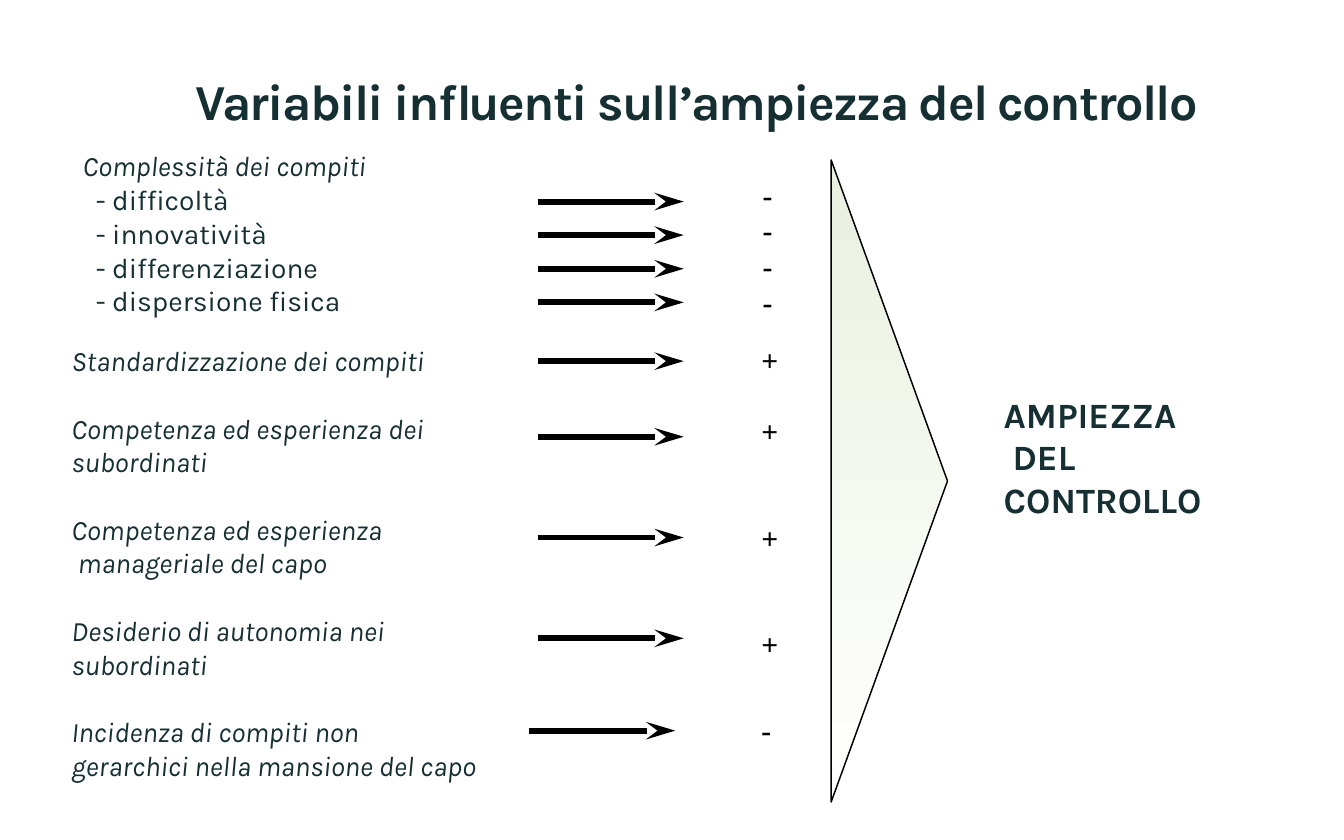
from dataclasses import dataclass

from lxml.etree import SubElement
from pptx import Presentation
from pptx.dml.color import RGBColor
from pptx.enum.shapes import MSO_CONNECTOR, MSO_SHAPE
from pptx.enum.text import MSO_ANCHOR, MSO_AUTO_SIZE, PP_ALIGN
from pptx.oxml.ns import qn
from pptx.util import Cm, Pt

INK = "162F33"
BLACK = "000000"


@dataclass(frozen=True)
class Line:
    text: str
    before: float = 0  # points
    indent: float = 0  # centimetres
    italic: bool = False


@dataclass(frozen=True)
class Style:
    font: str
    size: float
    color: str
    bold: bool = False
    align: PP_ALIGN = PP_ALIGN.LEFT


@dataclass(frozen=True)
class Area:
    left: float
    top: float
    width: float
    height: float


@dataclass(frozen=True)
class Arrow:
    left: float
    y: float


def rgb(color: str) -> RGBColor:
    return RGBColor.from_string(color)


def place(shape, area: Area) -> None:
    shape.left, shape.top = Cm(area.left), Cm(area.top)
    shape.width, shape.height = Cm(area.width), Cm(area.height)


def write(box, lines: list[Line], style: Style, wrap: bool = True) -> None:
    frame = box.text_frame
    frame.word_wrap = wrap
    frame.auto_size = MSO_AUTO_SIZE.SHAPE_TO_FIT_TEXT
    frame.vertical_anchor = MSO_ANCHOR.TOP
    frame.margin_left = frame.margin_right = Cm(0.3)
    frame.margin_top = frame.margin_bottom = Cm(0.15)
    frame.text = "\n".join(line.text for line in lines)
    for para, line in zip(frame.paragraphs, lines):
        para.alignment = style.align
        para.space_before, para.space_after = Pt(line.before), Pt(0)
        properties = para._p.get_or_add_pPr()
        properties.set("marL", str(Cm(line.indent)))
        properties.set("indent", "0")
        SubElement(properties, qn("a:buNone"))
        format_span(para.runs[0], style, line.italic)


def format_span(span, style: Style, italic: bool = False) -> None:
    span.font.name = style.font
    span.font.size = Pt(style.size)
    span.font.bold = style.bold
    span.font.italic = italic
    span.font.color.rgb = rgb(style.color)


def add_text(page, area: Area, lines: list[Line], style: Style, wrap: bool = True) -> None:
    box = page.shapes.add_textbox(0, 0, 0, 0)
    write(box, lines, style, wrap)
    place(box, area)


def add_arrow(page, arrow: Arrow) -> None:
    y = Cm(arrow.y)
    connector = page.shapes.add_connector(
        MSO_CONNECTOR.STRAIGHT, Cm(arrow.left), y, Cm(arrow.left + ARROW_LENGTH), y)
    connector.line.color.rgb = rgb(BLACK)
    connector.line.width = Pt(4)
    SubElement(connector.line._get_or_add_ln(), qn("a:tailEnd"), type="stealth", len="lg")
    SubElement(connector._element.spPr, qn("a:effectLst"))


def add_funnel(page, area: Area) -> None:
    funnel = page.shapes.add_shape(MSO_SHAPE.ISOSCELES_TRIANGLE, 0, 0, 0, 0)
    place(funnel, area)
    funnel.rotation = 90
    funnel.shadow.inherit = False
    funnel.fill.gradient()
    funnel.fill.gradient_angle = 270
    for stop, color in zip(funnel.fill.gradient_stops, ("EAF0E0", "FFFFFF")):
        stop.color.rgb = rgb(color)
    # The shading stays vertical while the triangle is turned
    funnel._element.spPr.find(qn("a:gradFill")).set("rotWithShape", "0")
    funnel.line.color.rgb = rgb(BLACK)
    funnel.line.width = Pt(1)


TITLE = Style("Karla", 34, INK, bold=True)
LIST = Style("Karla", 19, INK)
RESULT = Style("Karla", 24, INK, bold=True)
SIGN = Style("Times New Roman", 20, BLACK, bold=True)
CENTERED_SIGN = Style("Times New Roman", 20, BLACK, bold=True, align=PP_ALIGN.CENTER)

GROUP_GAP = 22.7
TASK_FEATURES = ["difficoltà", "innovatività", "differenziazione", "dispersione fisica"]
COMPLEXITY = [Line("Complessità dei compiti", italic=True)] + [
    Line(f"- {feature}", indent=0.31) for feature in TASK_FEATURES]
FACTORS = [
    Line("Standardizzazione dei compiti", italic=True),
    Line("Competenza ed esperienza dei", GROUP_GAP, italic=True),
    Line("subordinati", italic=True),
    Line("Competenza ed esperienza", GROUP_GAP, italic=True),
    Line("manageriale del capo", indent=0.15, italic=True),
    Line("Desiderio di autonomia nei", GROUP_GAP, italic=True),
    Line("subordinati", italic=True),
    Line("Incidenza di compiti non", GROUP_GAP, italic=True),
    Line("gerarchici nella mansione del capo", italic=True),
]
FACTOR_SIGNS = [Line("+"), Line("+", 23.6), Line("+", 48), Line("+", 48), Line("-", 34)]
OUTCOME = [Line("AMPIEZZA"), Line("DEL", indent=0.21), Line("CONTROLLO")]

ARROW_LENGTH = 3.48
ARROWS = [Arrow(12.8, 4.8 + 0.8 * row) for row in range(len(TASK_FEATURES))]
ARROWS += [Arrow(12.8, y) for y in (8.6, 10.4, 12.8, 15.2)] + [Arrow(12.6, 17.4)]


def main() -> None:
    deck = Presentation()
    deck.slide_width, deck.slide_height = Pt(907.12), Pt(567)
    page = deck.slides.add_slide(deck.slide_layouts[3])
    title, complexity, factors = page.placeholders

    # Title
    place(title, Area(1.19, 0.99, 30.81, 3.02))
    title.text_frame.text = "Variabili influenti sull’ampiezza del controllo"
    title.text_frame.vertical_anchor = MSO_ANCHOR.MIDDLE
    title.text_frame.auto_size = MSO_AUTO_SIZE.NONE
    heading = title.text_frame.paragraphs[0]
    heading.alignment = PP_ALIGN.CENTER
    heading.line_spacing = 0.85
    format_span(heading.runs[0], TITLE)
    heading.runs[0].font._element.set("spc", "-113")

    # Triangle leading to the outcome
    add_funnel(page, Area(13.53, 10.07, 15.29, 2.77))
    add_text(page, Area(23.6, 9.2, 6.12, 3.35), OUTCOME, RESULT, wrap=False)

    # Variables
    write(complexity, COMPLEXITY, LIST, wrap=False)
    place(complexity, Area(1.67, 3.39, 7.6, 4.32))
    write(factors, FACTORS, LIST)
    place(factors, Area(1.4, 8.03, 12.22, 10.74))

    # Arrows and direction of each effect
    for arrow in ARROWS:
        add_arrow(page, arrow)
    add_text(page, Area(17.6, 4.06, 1.35, 4.52), [Line("-")] * len(TASK_FEATURES), CENTERED_SIGN)
    add_text(page, Area(17.83, 8, 0.99, 10.8), FACTOR_SIGNS, SIGN)

    deck.save("out.pptx")


if __name__ == "__main__":
    main()
